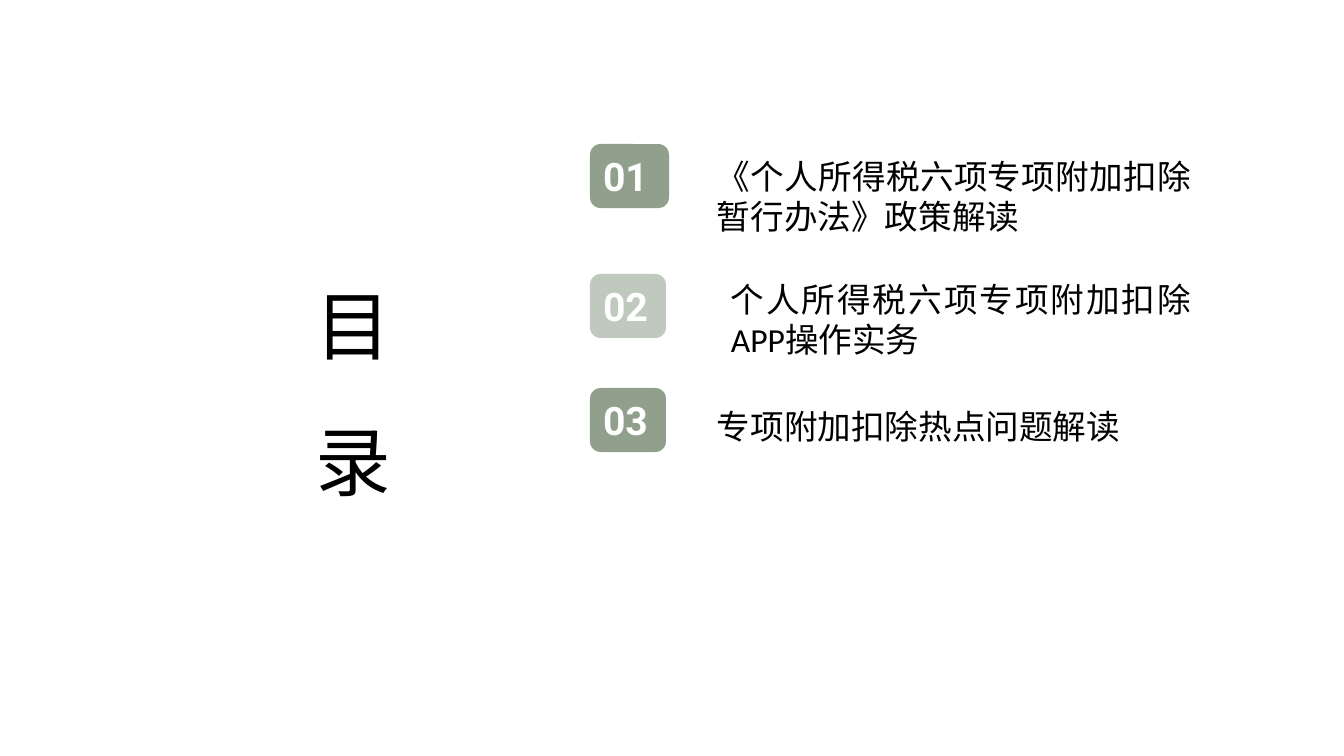
from lxml import etree
from pptx import Presentation
from pptx.dml.color import RGBColor
from pptx.enum.shapes import MSO_SHAPE
from pptx.enum.text import MSO_ANCHOR, PP_ALIGN
from pptx.oxml.ns import qn
from pptx.util import Emu, Pt

ROUNDED = MSO_SHAPE.ROUNDED_RECTANGLE
MIDDLE, TOP = MSO_ANCHOR.MIDDLE, MSO_ANCHOR.TOP
LEFT, CENTER, JUSTIFY = PP_ALIGN.LEFT, PP_ALIGN.CENTER, PP_ALIGN.JUSTIFY

EMU_PER_PX = 914400 / 100.8
SLIDE_WIDTH, SLIDE_HEIGHT = 1344, 756
CHINESE_FONT = "Noto Sans CJK SC"
GREEN, PALE_GREEN, WHITE, BLACK = "90A08D", "C0C9BE", "FFFFFF", "000000"
BADGE_HEIGHT = 64

# number, badge colour, badge top and width, title, title left and top offsets, title height
ENTRIES = [
    ("01", GREEN, 144, 79, "《个人所得税六项专项附加扣除暂行办法》政策解读", 117, 7, 92),
    ("02", PALE_GREEN, 274, 76, "个人所得税六项专项附加扣除APP操作实务", 131, 0, 92),
    ("03", GREEN, 388, 76, "专项附加扣除热点问题解读", 117, 13, 50),
]


def px(length):
    return Emu(round(length * EMU_PER_PX))


def color(hex_string):
    return RGBColor.from_string(hex_string)


def write_text(shape, text, font_name, size, text_color, alignment, anchor=TOP, bold=False):
    frame = shape.text_frame
    frame.word_wrap = True
    frame.vertical_anchor = anchor
    paragraph = frame.paragraphs[0]
    paragraph.alignment = alignment
    run = paragraph.add_run()
    run.text = text
    font = run.font
    font.name, font.size, font.bold = font_name, Pt(size), bold
    font.color.rgb = color(text_color)
    east_asian = etree.Element(qn("a:ea"), typeface=CHINESE_FONT)
    run._r.rPr.find(qn("a:latin")).addnext(east_asian)
    return paragraph


def add_heading(slide, left, top, width, height):
    box = slide.shapes.add_textbox(px(left), px(top), px(width), px(height))
    paragraph = write_text(box, "目录", CHINESE_FONT, 54, BLACK, CENTER)
    paragraph.line_spacing = 1.5


def add_badge(slide, left, top, width, number, fill):
    badge = slide.shapes.add_shape(ROUNDED, px(left), px(top), px(width), px(BADGE_HEIGHT))
    badge.shadow.inherit = False
    badge.fill.solid()
    badge.fill.fore_color.rgb = color(fill)
    badge.line.fill.background()
    write_text(badge, number, "Roboto", 28, WHITE, LEFT, MIDDLE, bold=True)


def add_contents(slide, left, width):
    for number, fill, top, badge_width, title, indent, drop, height in ENTRIES:
        add_badge(slide, left, top, badge_width, number, fill)
        box = slide.shapes.add_textbox(
            px(left + indent), px(top + drop), px(width - indent), px(height))
        write_text(box, title, "Calibri", 24, BLACK, JUSTIFY)


def main():
    presentation = Presentation()
    presentation.slide_width = px(SLIDE_WIDTH)
    presentation.slide_height = px(SLIDE_HEIGHT)
    slide = presentation.slides.add_slide(presentation.slide_layouts[6])
    add_heading(slide, 298, 229, 111, 285)
    add_contents(slide, 590, 611)
    presentation.save("out.pptx")


if __name__ == "__main__":
    main()
